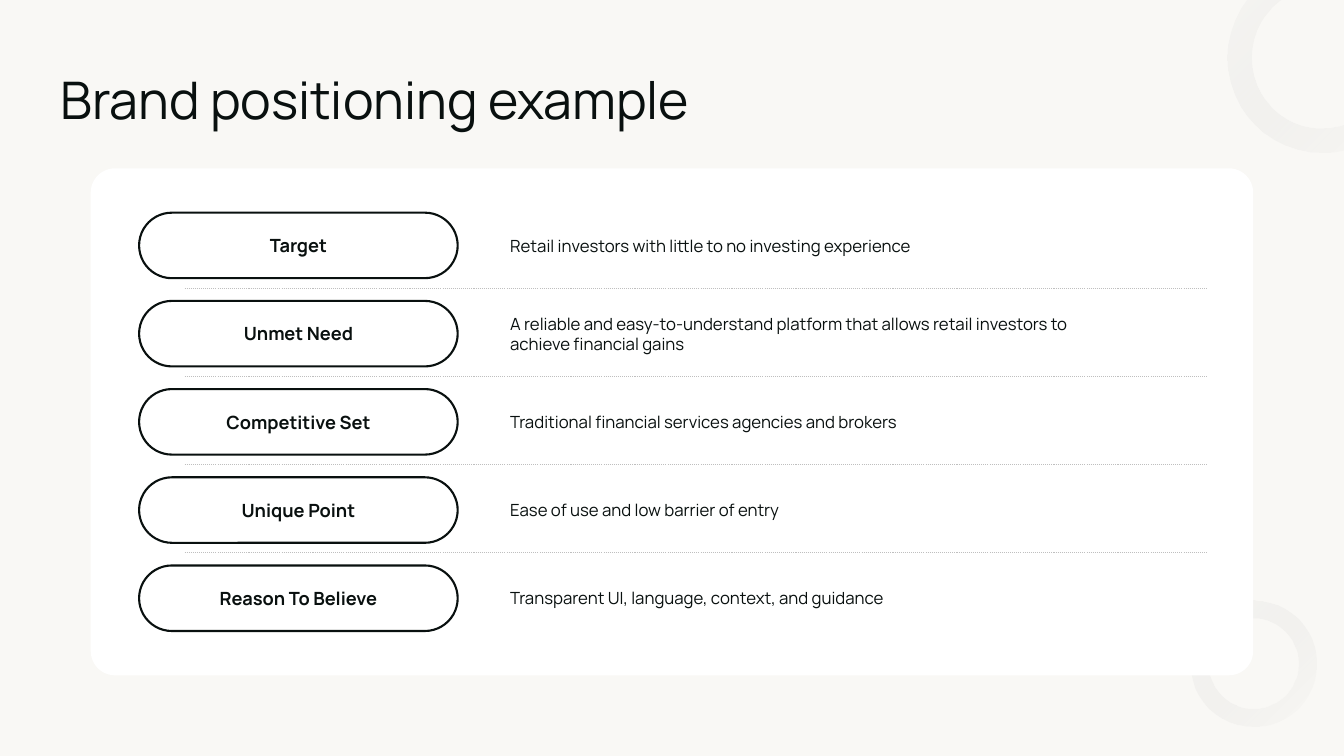
from dataclasses import dataclass

from pptx import Presentation
from pptx.dml.color import RGBColor
from pptx.enum.dml import MSO_LINE
from pptx.enum.shapes import MSO_CONNECTOR, MSO_SHAPE
from pptx.enum.text import MSO_ANCHOR, PP_ALIGN
from pptx.oxml.ns import qn
from pptx.oxml.xmlchemy import OxmlElement
from pptx.util import Inches, Pt

DONUT, OVAL, ROUNDED = MSO_SHAPE.DONUT, MSO_SHAPE.OVAL, MSO_SHAPE.ROUNDED_RECTANGLE
STRAIGHT, DOTTED = MSO_CONNECTOR.STRAIGHT, MSO_LINE.ROUND_DOT
MIDDLE, TOP = MSO_ANCHOR.MIDDLE, MSO_ANCHOR.TOP
LEFT, CENTER = PP_ALIGN.LEFT, PP_ALIGN.CENTER


@dataclass(frozen=True)
class Theme:
    font: str = "Manrope"
    background: RGBColor = RGBColor.from_string("F9F8F5")
    card: RGBColor = RGBColor.from_string("FFFFFF")
    ink: RGBColor = RGBColor.from_string("09100F")
    divider: RGBColor = RGBColor.from_string("BFBFBF")
    ring_light: RGBColor = RGBColor.from_string("EEEEEE")
    ring_dark: RGBColor = RGBColor.from_string("7F7F7F")
    title: Pt = Pt(37)
    label: Pt = Pt(13)
    body: Pt = Pt(12)


THEME = Theme()

ROWS = [
    ("Target", "Retail investors with little to no investing experience"),
    ("Unmet Need", "A reliable and easy-to-understand platform that allows "
                   "retail investors to achieve financial gains"),
    ("Competitive Set", "Traditional financial services agencies and brokers"),
    ("Unique Point", "Ease of use and low barrier of entry"),
    ("Reason To Believe", "Transparent UI, language, context, and guidance"),
]
# Left, top and diameter of the faint circles in the top right corner
HALO = [(9.61, -2.21, 6.16), (10.58, -1.54, 4.76), (11.25, -0.96, 3.4), (11.7, -0.47, 2.29)]


def set_alphas(shape, *percents):
    """Give the shape's colours, in document order, these opacities."""
    for color, percent in zip(shape._element.spPr.iter(qn("a:srgbClr")), percents):
        alpha = OxmlElement("a:alpha")
        alpha.set("val", str(percent * 1000))
        color.append(alpha)


def add_shape(s, kind, x, y, w, h, adjust=None):
    sp = s.shapes.add_shape(kind, Inches(x), Inches(y), Inches(w), Inches(h))
    sp.shadow.inherit = False
    if adjust is not None:
        sp.adjustments[0] = adjust
    return sp


def write(sp, text, size, bold=False, align=LEFT, anchor=MIDDLE):
    tf = sp.text_frame
    tf.word_wrap = True
    tf.vertical_anchor = anchor
    tf.margin_left = tf.margin_top = tf.margin_right = tf.margin_bottom = 0
    p = tf.paragraphs[0]
    p.text = text
    p.alignment = align
    p.font.name = THEME.font
    p.font.size = size
    p.font.bold = bold
    p.font.color.rgb = THEME.ink


def add_text(s, x, y, w, h, text, size, anchor=MIDDLE):
    box = s.shapes.add_textbox(Inches(x), Inches(y), Inches(w), Inches(h))
    write(box, text, size, anchor=anchor)


def add_ring(s, x, y, diameter, thickness):
    ring = add_shape(s, DONUT, x, y, diameter, diameter, thickness)
    ring.line.fill.background()
    ring.fill.gradient()
    ring.fill.gradient_angle = 315
    for stop, color in zip(ring.fill.gradient_stops, (THEME.ring_light, THEME.ring_dark)):
        stop.color.rgb = color
    set_alphas(ring, 20, 0)


def add_halo(s):
    for x, y, diameter in HALO:
        circle = add_shape(s, OVAL, x, y, diameter, diameter)
        circle.fill.background()
        circle.line.color.rgb = THEME.background
        circle.line.width = Pt(1.5)
        set_alphas(circle, 8)


def add_divider(s, x1, x2, y):
    line = s.shapes.add_connector(STRAIGHT, Inches(x1), Inches(y), Inches(x2), Inches(y))
    line.line.color.rgb = THEME.divider
    line.line.width = Pt(0.75)
    line.line.dash_style = DOTTED
    line._element.spPr.append(OxmlElement("a:effectLst"))


def add_row(s, x, y, h, label, description):
    pill = add_shape(s, ROUNDED, x, y, 3.16, h, 0.5)
    pill.fill.solid()
    pill.fill.fore_color.rgb = THEME.card
    pill.line.color.rgb = THEME.ink
    pill.line.width = Pt(1.5)
    write(pill, label, THEME.label, bold=True, align=CENTER)
    add_text(s, x + 3.68, y, 5.77, h, description, THEME.body)


def add_card(s, x, y, w, h):
    card = add_shape(s, ROUNDED, x, y, w, h, 0.048)
    card.fill.solid()
    card.fill.fore_color.rgb = THEME.card
    card.line.fill.background()

    row_height, margin = 0.65, 0.44
    pitch = (h - 2 * margin - row_height) / (len(ROWS) - 1)
    for i, (label, description) in enumerate(ROWS):
        top = y + margin + i * pitch
        add_row(s, x + 0.48, top, row_height, label, description)
        if i < len(ROWS) - 1:
            add_divider(s, x + 0.93, x + w - 0.45, top + row_height + 0.1)


def main():
    prs = Presentation()
    prs.slide_width, prs.slide_height = Inches(13.33), Inches(7.5)
    s = prs.slides.add_slide(prs.slide_layouts[6])
    s.background.fill.solid()
    s.background.fill.fore_color.rgb = THEME.background

    add_ring(s, 11.81, 5.96, 1.25, 0.145)
    add_halo(s)
    add_card(s, 0.9, 1.67, 11.53, 5.03)
    add_ring(s, 12.17, -0.37, 1.88, 0.129)
    add_text(s, 0.6, 0.67, 12.3, 0.68, "Brand positioning example", THEME.title, TOP)
    prs.save("out.pptx")


if __name__ == "__main__":
    main()
